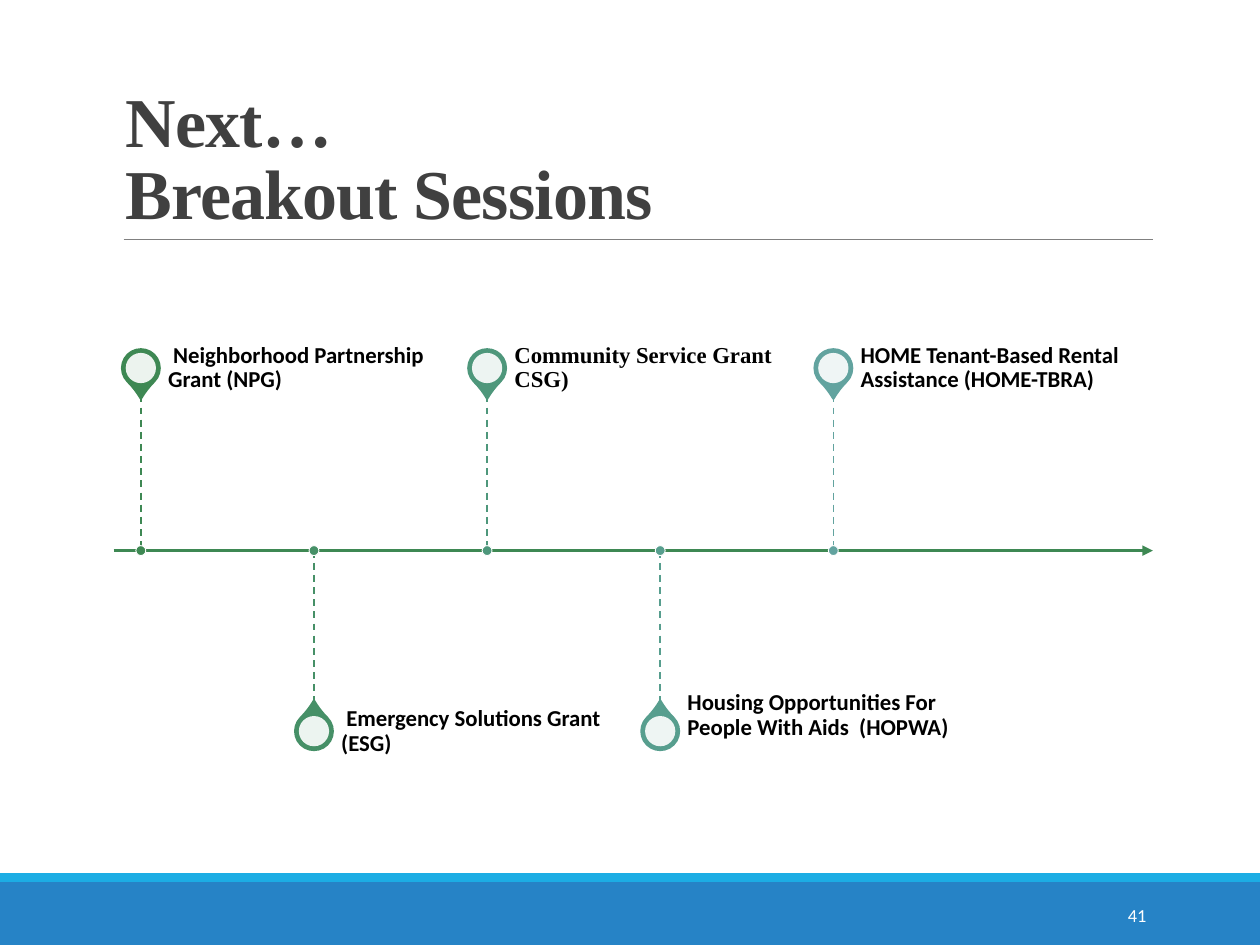
from dataclasses import dataclass

from lxml.etree import SubElement
from pptx import Presentation
from pptx.dml.color import RGBColor
from pptx.enum.dml import MSO_LINE
from pptx.enum.shapes import MSO_CONNECTOR, MSO_SHAPE
from pptx.enum.text import MSO_ANCHOR, PP_ALIGN
from pptx.oxml.ns import qn
from pptx.util import Cm, Pt


@dataclass(frozen=True)
class Theme:
    body_font: str = "Calibri"
    serif_font: str = "Times New Roman"
    title_size: float = 40
    label_size: float = 13
    number_size: float = 10.5
    title: str = "404040"
    label: str = "000000"
    white: str = "FFFFFF"
    rule: str = "808080"
    footer: str = "2683C6"
    footer_edge: str = "1CADE4"
    stops: tuple = ("3E8853", "469067", "4E977B", "579E8E", "62A39F")


THEME = Theme()
AXIS_Y = 11.1
AXIS_LEFT, AXIS_RIGHT = 2.29, 23.24
FIRST_STOP, STOP_GAP = 2.84, 3.49
PIN_SIZE, HOLE_SIZE, DOT_SIZE = 0.76, 0.61, 0.2
LABEL_WIDTH, LABEL_HEIGHT, LABEL_OFFSET = 5.81, 1.09, 0.55

SESSIONS = (
    (" Neighborhood Partnership Grant (NPG)", THEME.body_font, 0),
    (" Emergency Solutions Grant (ESG)", THEME.body_font, 0),
    ("Community Service Grant CSG)", THEME.serif_font, 0),
    ("Housing Opportunities For People With Aids  (HOPWA)", THEME.body_font, 0.64),
    ("HOME Tenant-Based Rental Assistance (HOME-TBRA)", THEME.body_font, 0),
)


def apply_format(target, values):
    for name, value in values.items():
        setattr(target, name, value)


def add_filled(slide, preset, box, fill, outline=None, weight=0):
    figure = slide.shapes.add_shape(preset, *map(Cm, box))
    figure.shadow.inherit = False
    figure.fill.solid()
    figure.fill.fore_color.rgb = RGBColor.from_string(fill)
    if outline:
        figure.line.color.rgb = RGBColor.from_string(outline)
        figure.line.width = Pt(weight)
    else:
        figure.line.fill.background()
    return figure


def add_round(slide, preset, center, size, fill, outline=None, weight=0):
    x, y = center
    box = (x - size / 2, y - size / 2, size, size)
    return add_filled(slide, preset, box, fill, outline, weight)


def add_rule(slide, start, end, color, weight):
    rule = slide.shapes.add_connector(MSO_CONNECTOR.STRAIGHT, *map(Cm, start + end))
    rule.line.color.rgb = RGBColor.from_string(color)
    rule.line.width = Pt(weight)
    SubElement(rule._element.spPr, qn("a:effectLst"))
    return rule


def add_text(slide, box, lines, font, color, frame_format, paragraph_format):
    holder = slide.shapes.add_textbox(*map(Cm, box))
    frame = holder.text_frame
    apply_format(frame, {"word_wrap": True, **frame_format})
    paragraph = frame.paragraphs[0]
    apply_format(paragraph, paragraph_format)
    for index, line in enumerate(lines):
        if index:
            paragraph.add_line_break()
        run = paragraph.add_run()
        run.text = line
        apply_format(run.font, font)
        run.font.color.rgb = RGBColor.from_string(color)
    return paragraph


def add_title(slide):
    heading = add_text(
        slide, (2.29, 0.79, 20.95, 4.04), ("Next…", "Breakout Sessions"),
        {"name": THEME.serif_font, "size": Pt(THEME.title_size), "bold": True},
        THEME.title, {"vertical_anchor": MSO_ANCHOR.BOTTOM}, {"line_spacing": 0.85})
    for run in heading.runs:
        run.font._element.set("spc", "-50")
    add_rule(slide, (2.49, 4.83), (AXIS_RIGHT, 4.83), THEME.rule, 0.5)


def add_footer(slide):
    add_filled(slide, MSO_SHAPE.RECTANGLE, (0, 17.78, 25.4, 1.27), THEME.footer)
    add_filled(slide, MSO_SHAPE.RECTANGLE, (0, 17.6, 25.4, 0.18), THEME.footer_edge)
    add_text(
        slide, (20.62, 17.93, 2.74, 1.02), ("41",),
        {"name": THEME.body_font, "size": Pt(THEME.number_size)}, THEME.white,
        {"vertical_anchor": MSO_ANCHOR.MIDDLE},
        {"alignment": PP_ALIGN.RIGHT, "space_after": Pt(6)})


def add_axis(slide):
    axis = add_rule(slide, (AXIS_LEFT, AXIS_Y), (AXIS_RIGHT, AXIS_Y), THEME.stops[0], 1.5)
    SubElement(axis.line._get_or_add_ln(), qn("a:tailEnd"), type="triangle")


def add_pin(slide, center, rotation, color):
    pin = add_round(slide, MSO_SHAPE.TEAR, center, PIN_SIZE, color, color, 1.25)
    pin.adjustments[0] = 1.15
    pin.rotation = rotation
    hole = add_round(slide, MSO_SHAPE.OVAL, center, HOLE_SIZE, THEME.white)
    tint = hole._element.spPr.find(qn("a:solidFill"))[0]
    SubElement(tint, qn("a:alpha"), val="90000")


def add_session(slide, index, name, font_name, bottom_inset):
    x = FIRST_STOP + index * STOP_GAP
    color = THEME.stops[index]
    above = index % 2 == 0
    pin_y, rotation, label_top = (7.42, 135, 6.88) if above else (14.74, 315, 14.2)
    stem_end = label_top + LABEL_HEIGHT if above else label_top

    add_pin(slide, (x, pin_y), rotation, color)
    add_text(
        slide, (x + LABEL_OFFSET, label_top, LABEL_WIDTH, LABEL_HEIGHT), (name,),
        {"name": font_name, "size": Pt(THEME.label_size), "bold": True}, THEME.label,
        {"vertical_anchor": MSO_ANCHOR.MIDDLE, "margin_left": 0, "margin_top": 0,
         "margin_right": Cm(0.23), "margin_bottom": Cm(bottom_inset)},
        {"line_spacing": 0.9})
    stem = add_rule(slide, (x, min(stem_end, AXIS_Y)), (x, max(stem_end, AXIS_Y)), color, 1)
    stem.line.dash_style = MSO_LINE.DASH
    add_round(slide, MSO_SHAPE.OVAL, (x, AXIS_Y), DOT_SIZE, color, THEME.white, 0.5)


def main():
    deck = Presentation()
    apply_format(deck, {"slide_width": Cm(25.4), "slide_height": Cm(19.05)})
    slide = deck.slides.add_slide(deck.slide_layouts[6])
    add_footer(slide)
    add_title(slide)
    add_axis(slide)
    for index, session in enumerate(SESSIONS):
        add_session(slide, index, *session)
    deck.save("out.pptx")


if __name__ == "__main__":
    main()
